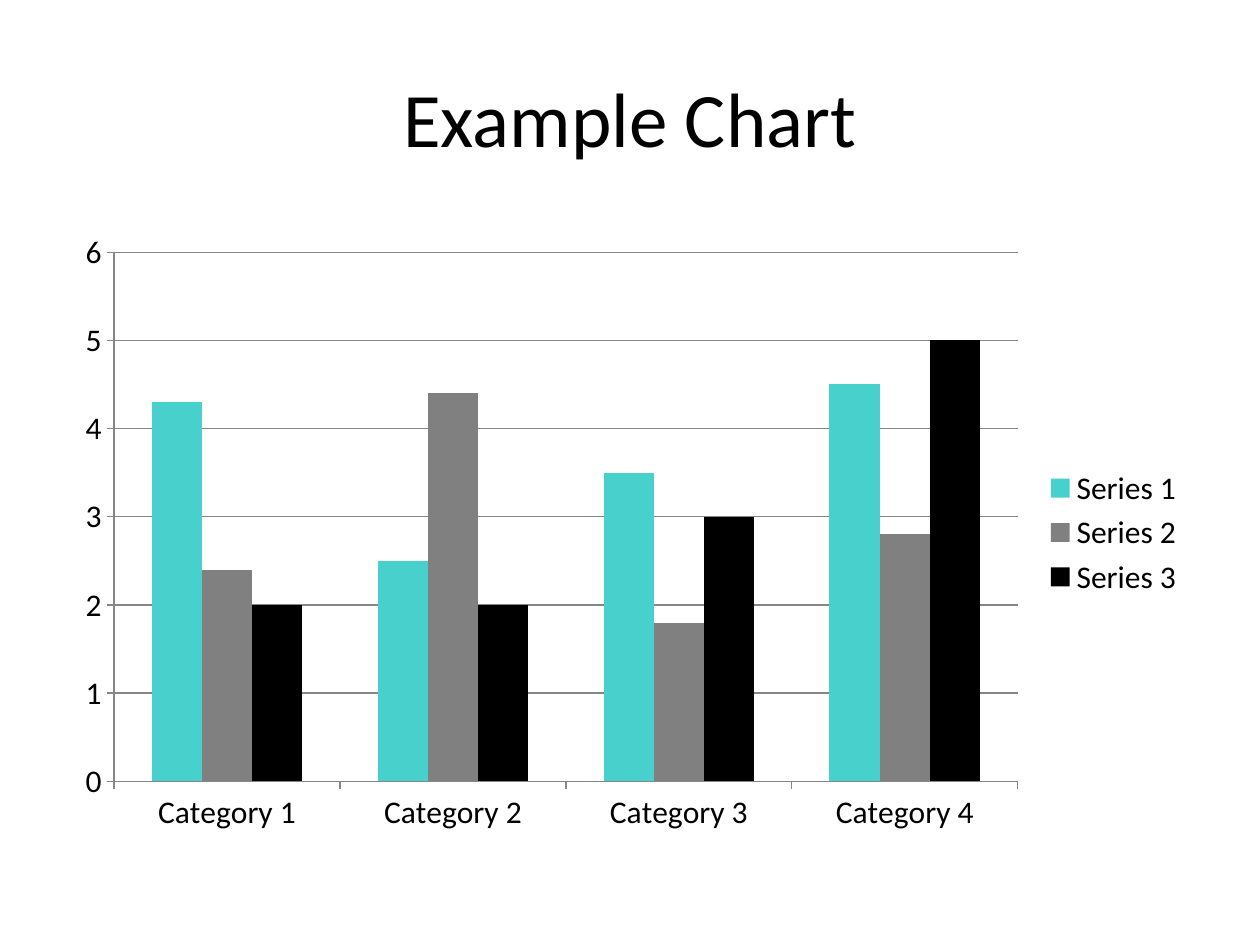
from pptx import Presentation
from pptx.chart.data import CategoryChartData
from pptx.dml.color import RGBColor
from pptx.enum.chart import XL_CHART_TYPE, XL_LEGEND_POSITION, XL_TICK_MARK
from pptx.enum.text import MSO_ANCHOR, PP_ALIGN
from pptx.util import Cm, Pt

CATEGORIES = [f"Category {number}" for number in range(1, 5)]
SERIES = {
    "Series 1": ("48D1CC", (4.3, 2.5, 3.5, 4.5)),
    "Series 2": ("808080", (2.4, 4.4, 1.8, 2.8)),
    "Series 3": ("000000", (2, 2, 3, 5)),
}


def color(hex_value):
    return RGBColor.from_string(hex_value)


def set_values(target, values):
    for name, value in values.items():
        setattr(target, name, value)


class SlideBuilder:
    font_name = "Calibri"
    text_color = "000000"
    line_color = "868686"

    def __init__(self, page):
        self.page = page

    def style_font(self, font, size):
        set_values(font, {"name": self.font_name, "size": Pt(size), "bold": False})
        font.color.rgb = color(self.text_color)

    def style_line(self, line):
        line.color.rgb = color(self.line_color)
        line.width = Pt(0.75)

    def title(self, text, left, top, width, height):
        box = self.page.shapes.add_textbox(Cm(left), Cm(top), Cm(width), Cm(height))
        set_values(box.text_frame, {"word_wrap": True, "vertical_anchor": MSO_ANCHOR.MIDDLE})
        para = box.text_frame.paragraphs[0]
        para.alignment = PP_ALIGN.CENTER
        span = para.add_run()
        span.text = text
        self.style_font(span.font, 44)

    def column_chart(self, categories, series, left, top, width, height):
        data = CategoryChartData()
        data.categories = categories
        for name, (_, values) in series.items():
            data.add_series(name, values)
        chart = self.page.shapes.add_chart(
            XL_CHART_TYPE.COLUMN_CLUSTERED, Cm(left), Cm(top), Cm(width), Cm(height), data
        ).chart
        set_values(chart, {"has_title": False, "has_legend": True})
        self.style_font(chart.font, 18)
        set_values(chart.legend, {"position": XL_LEGEND_POSITION.RIGHT, "include_in_layout": False})

        plot = chart.plots[0]
        set_values(plot, {"gap_width": 150, "overlap": 0, "vary_by_categories": False})
        for column, (fill_color, _) in zip(plot.series, series.values()):
            column.format.fill.solid()
            column.format.fill.fore_color.rgb = color(fill_color)

        for axis in (chart.category_axis, chart.value_axis):
            set_values(axis, {"major_tick_mark": XL_TICK_MARK.OUTSIDE,
                              "minor_tick_mark": XL_TICK_MARK.NONE})
            self.style_line(axis.format.line)
        set_values(chart.value_axis, {"minimum_scale": 0, "maximum_scale": 6,
                                      "major_unit": 1, "has_major_gridlines": True})
        self.style_line(chart.value_axis.major_gridlines.format.line)


def main():
    deck = Presentation()
    set_values(deck, {"slide_width": Cm(25.4), "slide_height": Cm(19.05)})
    builder = SlideBuilder(deck.slides.add_slide(deck.slide_layouts[6]))
    builder.title("Example Chart", 1.27, 0.76, 22.86, 3.18)
    builder.column_chart(CATEGORIES, SERIES, 1.27, 4.45, 22.86, 12.57)
    deck.save("out.pptx")


if __name__ == "__main__":
    main()
